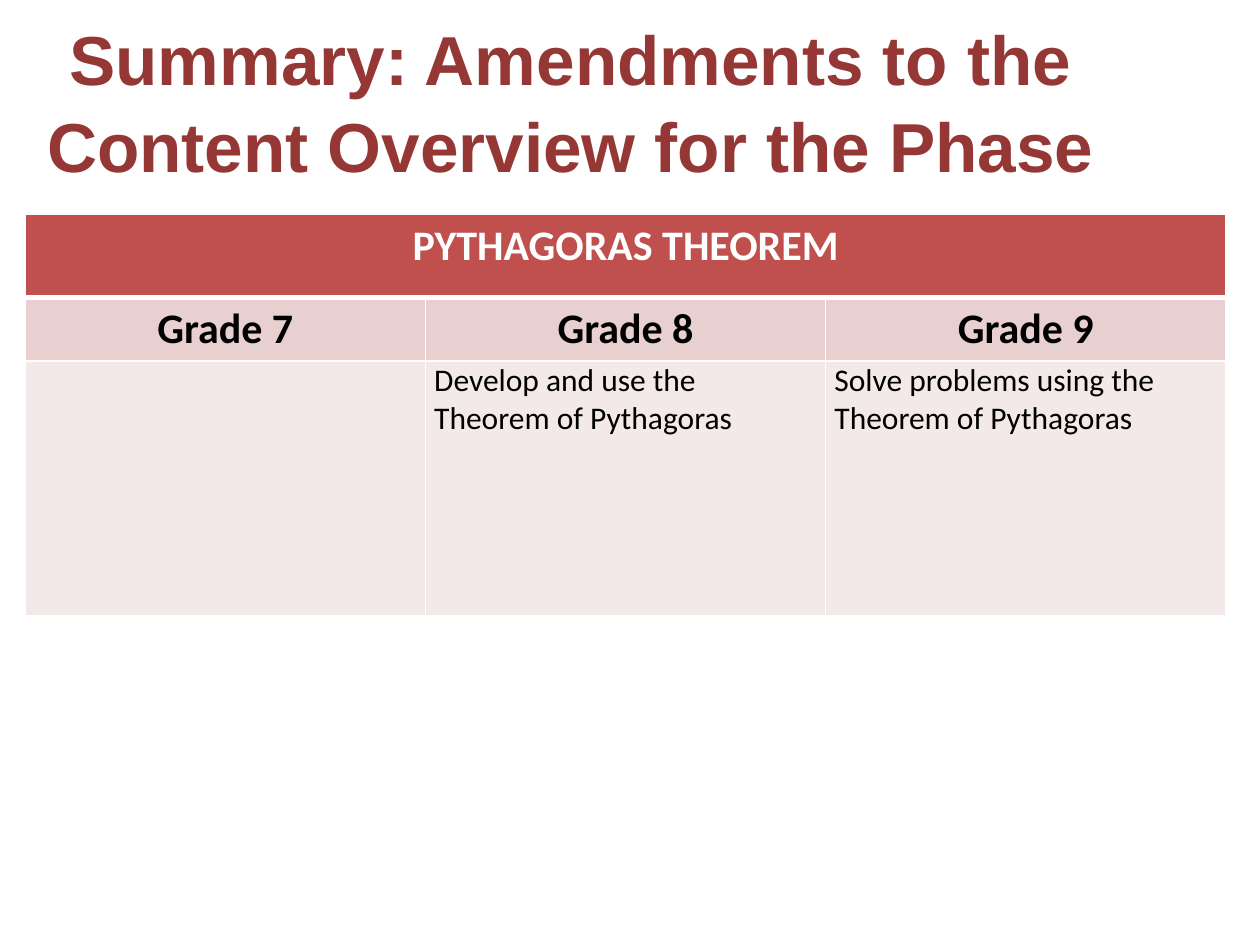
import pptx
import pptx.dml.color
import pptx.enum.text
import pptx.oxml
import pptx.oxml.ns
import pptx.util
from pptx.util import Inches, Pt

COLORS = {
    "title": "953735",
    "banner": "C0504D",
    "grade": "E8D0D0",
    "content": "F4E9E9",
    "white": "FFFFFF",
    "black": "000000",
}
GRADES = ["Grade 7", "Grade 8", "Grade 9"]
CONTENT = [
    "",
    "Develop and use the Theorem of Pythagoras",
    "Solve problems using the Theorem of Pythagoras",
]
ROW_HEIGHTS = [0.66, 0.5, 2.02]
TABLE_WIDTH = 9.53


def color(name):
    return pptx.dml.color.RGBColor.from_string(COLORS[name])


def style_paragraph(para, size, font, color_name, bold, centered):
    para.font.size = Pt(size)
    para.font.name = font
    para.font.bold = bold
    para.font.color.rgb = color(color_name)
    align = pptx.enum.text.PP_ALIGN
    para.alignment = align.CENTER if centered else align.LEFT


def set_borders(cell, bottom=1):
    """Draw white cell borders; they must precede the fill in the XML."""
    properties = cell._tc.get_or_add_tcPr()
    widths = {"lnL": 1, "lnR": 1, "lnT": 1, "lnB": bottom}
    for position, (side, width) in enumerate(widths.items()):
        line = pptx.oxml.parse_xml(
            f'<a:{side} {pptx.oxml.ns.nsdecls("a")} w="{Pt(width)}">'
            f'<a:solidFill><a:srgbClr val="{COLORS["white"]}"/></a:solidFill>'
            f"</a:{side}>"
        )
        properties.insert(position, line)


def fill_cell(cell, text, fill, size=24, font_color="black", bold=True,
              centered=True, bottom=1):
    cell.fill.solid()
    cell.fill.fore_color.rgb = color(fill)
    set_borders(cell, bottom)
    cell.text = text
    style_paragraph(cell.text_frame.paragraphs[0], size, "Calibri",
                    font_color, bold, centered)


def add_title(page, text):
    title = page.shapes.title
    title.left, title.top = Inches(-0.12), Inches(0.13)
    title.width, title.height = Inches(9.3), Inches(1.32)
    frame = title.text_frame
    frame.text = text
    frame.word_wrap = True
    frame.vertical_anchor = pptx.enum.text.MSO_ANCHOR.MIDDLE
    para = frame.paragraphs[0]
    para.line_spacing = 1.04
    style_paragraph(para, 39.6, "Arial", "title", True, True)


def add_overview_table(page):
    table = page.shapes.add_table(
        len(ROW_HEIGHTS), len(GRADES), Inches(0.2), Inches(1.7),
        Inches(TABLE_WIDTH), Inches(sum(ROW_HEIGHTS))).table
    for row, height in zip(table.rows, ROW_HEIGHTS):
        row.height = Inches(height)

    # Banner across all grades
    table.cell(0, 0).merge(table.cell(0, len(GRADES) - 1))
    for column in range(len(GRADES)):
        fill_cell(table.cell(0, column),
                  "" if column else "PYTHAGORAS THEOREM",
                  "banner", font_color="white", bottom=3)

    # Grade headings and their content
    for column, (grade, content) in enumerate(zip(GRADES, CONTENT)):
        fill_cell(table.cell(1, column), grade, "grade")
        cell = table.cell(2, column)
        fill_cell(cell, content, "content", size=18, bold=False, centered=False)
        cell.margin_left = cell.margin_right = Inches(0.07)
        cell.margin_top = cell.margin_bottom = 0


def main():
    deck = pptx.Presentation()
    deck.slide_width, deck.slide_height = Inches(10), Inches(7.5)
    page = deck.slides.add_slide(deck.slide_layouts[5])
    add_title(page, "Summary: Amendments to the Content Overview for the Phase")
    add_overview_table(page)
    deck.save("out.pptx")


if __name__ == "__main__":
    main()
